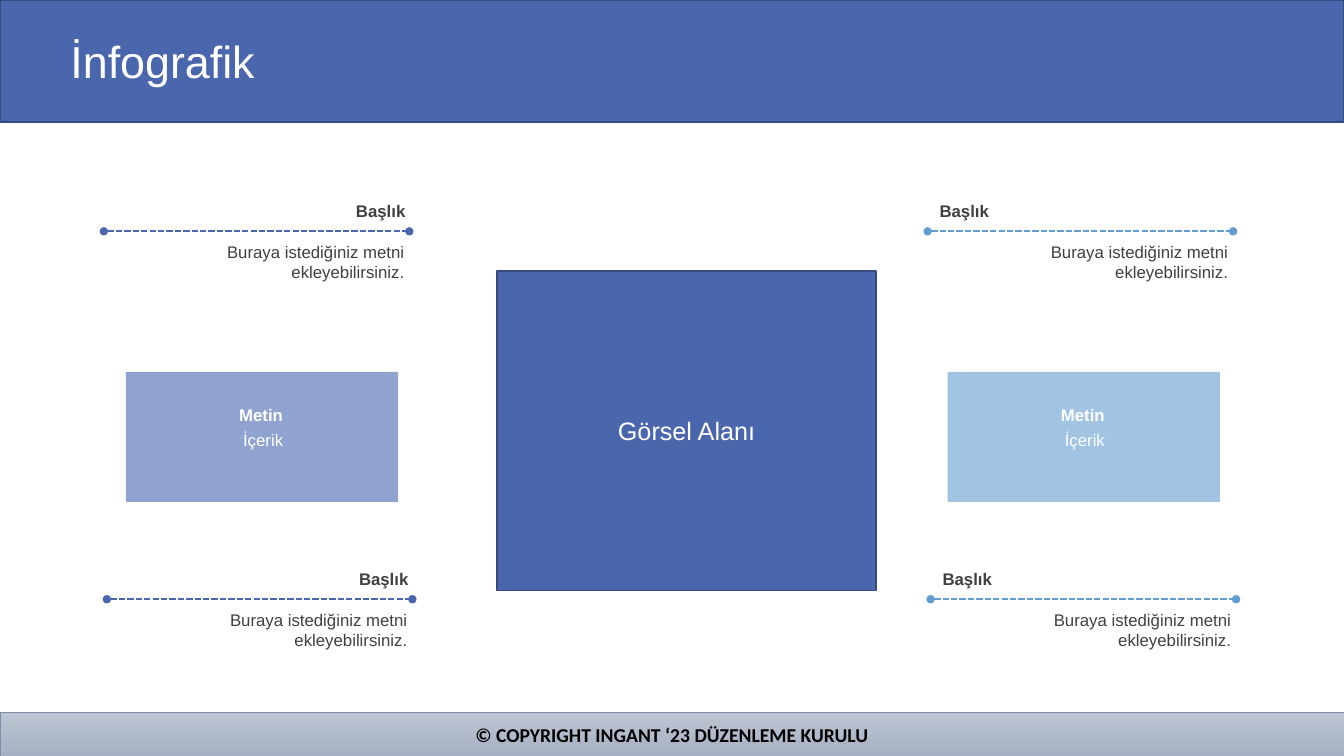
from lxml import etree
from pptx import Presentation
from pptx.dml.color import RGBColor
from pptx.enum import dml, shapes, text
from pptx.oxml import ns
from pptx.util import Inches, Pt

BLUE = RGBColor(0x4A, 0x66, 0xAC)
NAVY = RGBColor(0x37, 0x4B, 0x7F)
SKY = RGBColor(0x62, 0x9D, 0xD1)
PALE_BLUE = RGBColor(0x90, 0xA2, 0xCF)
PALE_SKY = RGBColor(0xA1, 0xC4, 0xE3)
SILVER = RGBColor(0xBE, 0xC5, 0xD2)
STEEL = RGBColor(0xA6, 0xB1, 0xC3)
STEEL_EDGE = RGBColor(0x7F, 0x8F, 0xA9)
GREY = RGBColor(0x40, 0x40, 0x40)
WHITE = RGBColor(0xFF, 0xFF, 0xFF)
BLACK = RGBColor(0, 0, 0)
LEFT, CENTER, RIGHT = text.PP_ALIGN.LEFT, text.PP_ALIGN.CENTER, text.PP_ALIGN.RIGHT
TOP, MIDDLE = text.MSO_ANCHOR.TOP, text.MSO_ANCHOR.MIDDLE

# Content
TITLE = "İnfografik"
FOOTER = "© COPYRIGHT INGANT ‘23 DÜZENLEME KURULU"
VISUAL = "Görsel Alanı"
HEADING, BODY = "Başlık", "Buraya istediğiniz metni ekleyebilirsiniz."
# Notes: left, top, heading alignment, rule colour
NOTES = [
    (1.05, 1.94, RIGHT, BLUE),
    (1.08, 5.59, RIGHT, BLUE),
    (9.22, 1.94, LEFT, SKY),
    (9.25, 5.59, LEFT, SKY),
]
# Cards: left, fill, heading, content
CARDS = [
    (1.25, PALE_BLUE, "Metin", "İçerik"),
    (9.4, PALE_SKY, "Metin", "İçerik"),
]

prs = Presentation()
prs.slide_width, prs.slide_height = Inches(13.33), Inches(7.5)
s = prs.slides.add_slide(prs.slide_layouts[6])


def write(sp, words, size=12, color=GREY, bold=False, align=LEFT, anchor=TOP, font="Arial"):
    tf = sp.text_frame
    tf.word_wrap = True
    tf.vertical_anchor = anchor
    p = tf.paragraphs[0]
    p.alignment = align
    r = p.add_run()
    r.text = words
    r.font.name, r.font.size, r.font.bold = font, Pt(size), bold
    r.font.color.rgb = color
    return p


def add_label(x, y, w, h, words, **style):
    sp = s.shapes.add_textbox(Inches(x), Inches(y), Inches(w), Inches(h))
    return write(sp, words, **style)


def add_rect(x, y, w, h, fill=None, edge=None, weight=1):
    sp = s.shapes.add_shape(shapes.MSO_SHAPE.RECTANGLE,
                            Inches(x), Inches(y), Inches(w), Inches(h))
    sp.shadow.inherit = False
    if fill is not None:
        sp.fill.solid()
        sp.fill.fore_color.rgb = fill
    if edge is None:
        sp.line.fill.background()
    else:
        sp.line.color.rgb = edge
        sp.line.width = Pt(weight)
    return sp


def add_dotted_rule(x, y, length, color):
    rule = s.shapes.add_connector(shapes.MSO_CONNECTOR.STRAIGHT,
                                  Inches(x), Inches(y), Inches(x + length), Inches(y))
    rule.line.color.rgb = color
    rule.line.width = Pt(1.5)
    rule.line.dash_style = dml.MSO_LINE.SQUARE_DOT
    ln = rule.line._get_or_add_ln()
    for end in ("a:headEnd", "a:tailEnd"):
        etree.SubElement(ln, ns.qn(end), type="oval")
    etree.SubElement(rule._element.spPr, ns.qn("a:effectLst"))


# Header band and title
add_rect(0, 0, 13.33, 1.21, BLUE, NAVY)
p = add_label(0.6, 0.24, 12.41, 0.79, TITLE, size=32, color=WHITE, anchor=MIDDLE)
p.line_spacing = 0.9

# Footer band
footer = add_rect(0, 7.07, 13.33, 0.43, edge=STEEL_EDGE, weight=0.5)
footer.fill.gradient()
footer.fill.gradient_angle = 270
for stop, color in zip(footer.fill.gradient_stops, (SILVER, STEEL)):
    stop.color.rgb = color
write(footer, FOOTER, size=14, color=BLACK, bold=True, align=CENTER, anchor=MIDDLE, font="Calibri")

# Corner notes: heading, dashed rule, body
for x, y, align, color in NOTES:
    add_label(x, y, 3.07, 0.3, HEADING, bold=True, align=align, anchor=MIDDLE)
    add_label(x, y + 0.41, 3.06, 0.71, BODY, align=RIGHT)
    add_dotted_rule(x - 0.02, y + 0.355, 3.03, color)

# Side cards
for x, fill, heading, content in CARDS:
    add_rect(x, 3.69, 2.7, 1.29, fill)
    add_label(x + 0.48, 3.97, 1.72, 0.3, heading, color=WHITE, bold=True, align=CENTER)
    add_label(x + 0.5, 4.21, 1.72, 0.3, content, color=WHITE, align=CENTER)

# Central visual area
visual = add_rect(4.93, 2.69, 3.76, 3.17, BLUE, NAVY)
write(visual, VISUAL, size=18, color=WHITE, align=CENTER, anchor=MIDDLE)

prs.save("out.pptx")
